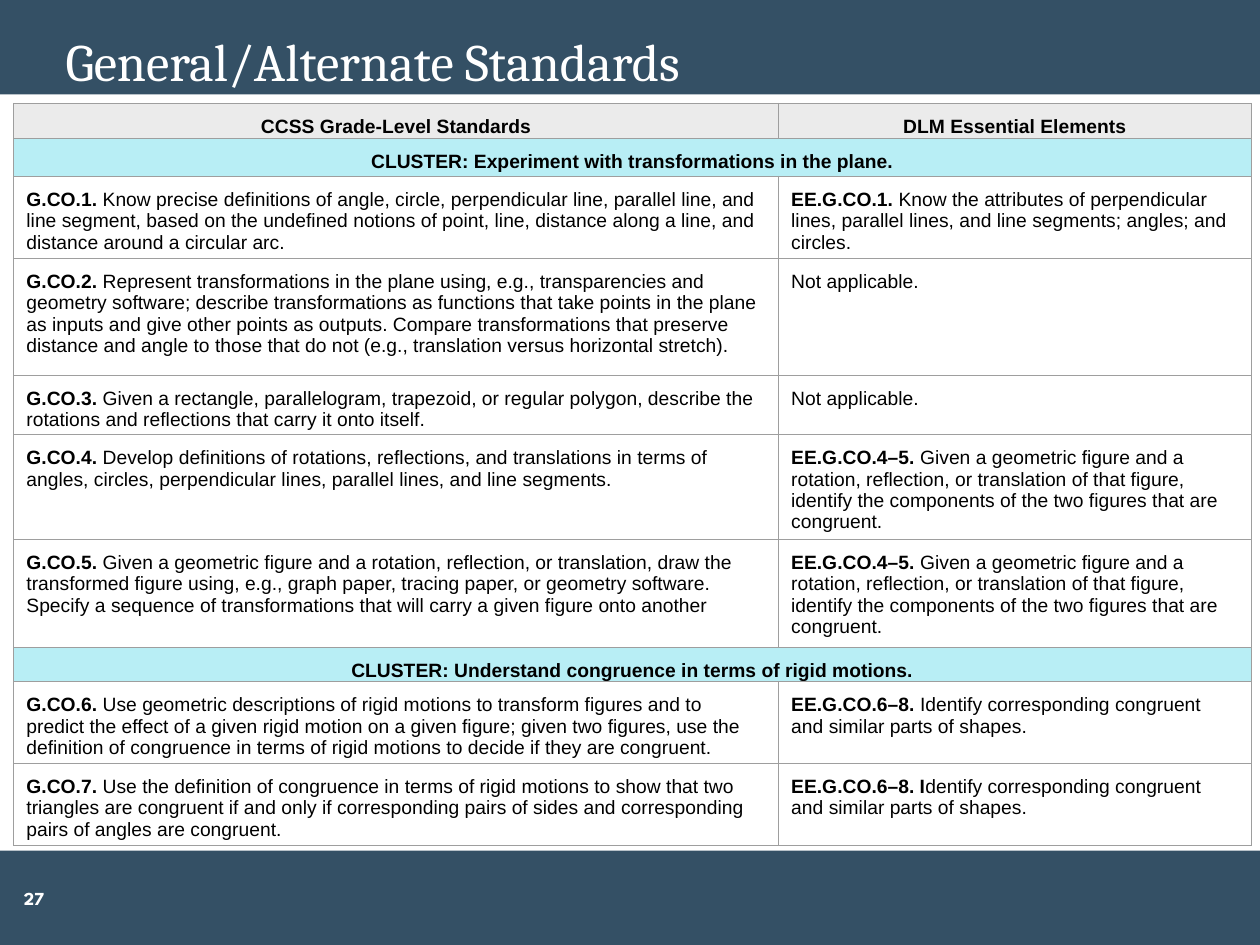
from pptx import Presentation
from pptx.dml.color import RGBColor
from pptx.enum.shapes import MSO_SHAPE
from pptx.enum.text import MSO_ANCHOR, PP_ALIGN
from pptx.oxml import parse_xml
from pptx.oxml.ns import nsdecls
from pptx.util import Inches, Pt

NAVY = RGBColor(0x34, 0x50, 0x65)
WHITE = RGBColor(0xFF, 0xFF, 0xFF)
BLACK = RGBColor(0, 0, 0)
HEADER_GRAY = RGBColor(0xEB, 0xEB, 0xEB)
CLUSTER_BLUE = RGBColor(0xB8, 0xEE, 0xF5)
BORDER_GRAY = RGBColor(0x9E, 0x9E, 0x9E)

COLUMN_WIDTHS = (6.07, 3.75)
FIGURE_ELEMENT = (
    "EE.G.CO.4–5. ",
    "Given a geometric figure and a rotation, reflection, or translation of that figure, "
    "identify the components of the two figures that are congruent.",
)
NOT_APPLICABLE = ("", "Not applicable.")

ROWS = [
    (0.28, HEADER_GRAY, [("CCSS Grade-Level Standards", ""), ("DLM Essential Elements", "")]),
    (0.3, CLUSTER_BLUE, [("CLUSTER: Experiment with transformations in the plane.", "")]),
    (0.65, None, [
        ("G.CO.1. ", "Know precise definitions of angle, circle, perpendicular line, parallel line, "
         "and line segment, based on the undefined notions of point, line, distance along a line, "
         "and distance around a circular arc."),
        ("EE.G.CO.1. ", "Know the attributes of perpendicular lines, parallel lines, and line "
         "segments; angles; and circles."),
    ]),
    (0.93, None, [
        ("G.CO.2.", " Represent transformations in the plane using, e.g., transparencies and geometry "
         "software; describe transformations as functions that take points in the plane as inputs "
         "and give other points as outputs. Compare transformations that preserve distance and "
         "angle to those that do not (e.g., translation versus horizontal stretch)."),
        NOT_APPLICABLE,
    ]),
    (0.47, None, [
        ("G.CO.3.", " Given a rectangle, parallelogram, trapezoid, or regular polygon, describe the "
         "rotations and reflections that carry it onto itself."),
        NOT_APPLICABLE,
    ]),
    (0.83, None, [
        ("G.CO.4. ", "Develop definitions of rotations, reflections, and translations in terms of "
         "angles, circles, perpendicular lines, parallel lines, and line segments."),
        FIGURE_ELEMENT,
    ]),
    (0.86, None, [
        ("G.CO.5. ", "Given a geometric figure and a rotation, reflection, or translation, draw the "
         "transformed figure using, e.g., graph paper, tracing paper, or geometry software. "
         "Specify a sequence of transformations that will carry a given figure onto another"),
        FIGURE_ELEMENT,
    ]),
    (0.27, CLUSTER_BLUE, [("CLUSTER: Understand congruence in terms of rigid motions.", "")]),
    (0.65, None, [
        ("G.CO.6.", " Use geometric descriptions of rigid motions to transform figures and to predict "
         "the effect of a given rigid motion on a given figure; given two figures, use the "
         "definition of congruence in terms of rigid motions to decide if they are congruent."),
        ("EE.G.CO.6–8.", " Identify corresponding congruent and similar parts of shapes."),
    ]),
    (0.65, None, [
        ("G.CO.7. ", "Use the definition of congruence in terms of rigid motions to show that two "
         "triangles are congruent if and only if corresponding pairs of sides and corresponding "
         "pairs of angles are congruent."),
        ("EE.G.CO.6–8. I", "dentify corresponding congruent and similar parts of shapes."),
    ]),
]


def set_values(target, values):
    """Set every attribute named in a dict of format values."""
    for name, value in values.items():
        setattr(target, name, value)


def set_margins(target, left, top, right, bottom):
    """Set the inner margins of a text frame or table cell in inches."""
    set_values(target, {
        "margin_left": Inches(left), "margin_top": Inches(top),
        "margin_right": Inches(right), "margin_bottom": Inches(bottom),
    })


def add_run(paragraph, text, font, size, color, bold=False):
    """Append a formatted run to a paragraph."""
    run = paragraph.add_run()
    run.text = text
    set_values(run.font, {"name": font, "size": Pt(size), "bold": bold})
    run.font.color.rgb = color


def add_band(slide, top):
    """Add a full-width navy band."""
    band = slide.shapes.add_shape(
        MSO_SHAPE.RECTANGLE, Inches(0), Inches(top), Inches(10), Inches(0.75))
    band.shadow.inherit = False
    band.fill.solid()
    band.fill.fore_color.rgb = NAVY
    band.line.fill.background()


def add_slide_number(slide):
    """Add the slide number at the left of the footer band."""
    frame = slide.shapes.add_textbox(
        Inches(0), Inches(6.75), Inches(0.54), Inches(0.75)).text_frame
    set_values(frame, {"word_wrap": True, "vertical_anchor": MSO_ANCHOR.MIDDLE})
    set_margins(frame, 0.07, 0.04, 0.07, 0.04)
    paragraph = frame.paragraphs[0]
    paragraph.alignment = PP_ALIGN.CENTER
    add_run(paragraph, "27", "League Spartan", 10.5, WHITE, True)


def format_title(slide):
    """Fill the title placeholder and bring it in front of the bands."""
    title = slide.shapes.title
    set_values(title, {
        "left": Inches(0.52), "top": Inches(0), "width": Inches(8.98), "height": Inches(0.74)})
    frame = title.text_frame
    set_values(frame, {"word_wrap": True, "vertical_anchor": MSO_ANCHOR.BOTTOM})
    set_margins(frame, 0, 0, 0, 0)
    paragraph = frame.paragraphs[0]
    set_values(paragraph, {"alignment": PP_ALIGN.LEFT, "line_spacing": 0.9})
    add_run(paragraph, "General/Alternate Standards", "Cambria", 30, WHITE)
    slide.shapes._spTree.append(title._element)


def set_borders(cell):
    """Draw a thin gray line on all four sides of a cell."""
    properties = cell._tc.get_or_add_tcPr()
    for index, side in enumerate(("lnL", "lnR", "lnT", "lnB")):
        properties.insert(index, parse_xml(
            f'<a:{side} {nsdecls("a")} w="{Pt(0.75)}"><a:solidFill>'
            f'<a:srgbClr val="{BORDER_GRAY}"/></a:solidFill></a:{side}>'))


def format_cell(cell, fill):
    """Set the margins, fill and borders of a cell."""
    set_margins(cell, 0.1, 0.1, 0.1, 0)
    if fill is None:
        cell.fill.background()
    else:
        cell.fill.solid()
        cell.fill.fore_color.rgb = fill
    set_borders(cell)


def add_standards_table(slide):
    """Add the table of standards and essential elements."""
    table = slide.shapes.add_table(
        len(ROWS), len(COLUMN_WIDTHS), Inches(0.11), Inches(0.82),
        Inches(sum(COLUMN_WIDTHS)), Inches(sum(row[0] for row in ROWS))).table
    set_values(table, {"first_row": False, "horz_banding": False})
    for column, width in zip(table.columns, COLUMN_WIDTHS):
        column.width = Inches(width)
    for row, (height, fill, entries) in zip(table.rows, ROWS):
        row.height = Inches(height)
        for cell in row.cells:
            format_cell(cell, fill)
        if len(entries) == 1:
            row.cells[0].merge(row.cells[1])
        for cell, (label, body) in zip(row.cells, entries):
            paragraph = cell.text_frame.paragraphs[0]
            paragraph.alignment = PP_ALIGN.CENTER if fill else PP_ALIGN.LEFT
            for text, bold in ((label, True), (body, False)):
                if text:
                    add_run(paragraph, text, "Arial", 11, BLACK, bold)


def main():
    """Build and save the slide."""
    presentation = Presentation()
    set_values(presentation, {"slide_width": Inches(10), "slide_height": Inches(7.5)})
    slide = presentation.slides.add_slide(presentation.slide_layouts[5])
    for top in (0, 6.75):
        add_band(slide, top)
    add_slide_number(slide)
    format_title(slide)
    add_standards_table(slide)
    presentation.save("out.pptx")


if __name__ == "__main__":
    main()
